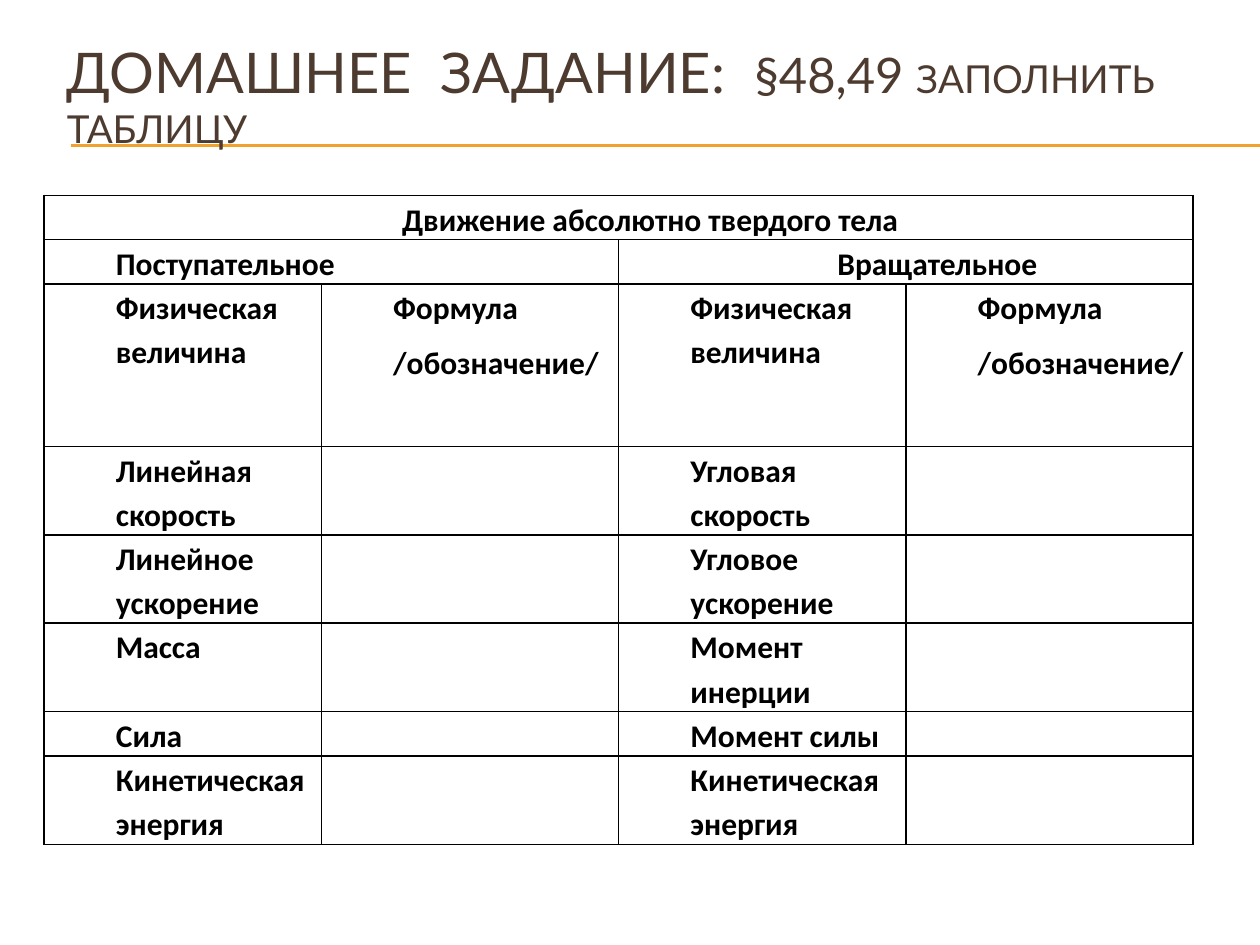
from lxml.etree import SubElement
from pptx import Presentation
from pptx.dml.color import RGBColor
from pptx.enum.shapes import MSO_CONNECTOR
from pptx.enum.text import MSO_ANCHOR, MSO_AUTO_SIZE, PP_ALIGN
from pptx.oxml.ns import qn
from pptx.util import Inches, Pt

HUES = {"rule": "F0A22E", "title": "4E3B30", "ink": "000000"}
FONTS = {"title": "Lato", "table": "Calibri"}
COLS = [22, 23.6, 22.8, 22.8]
ROWS = [3, 3, 12.9, 5.9, 5.9, 3, 3, 5.9]
HEAD = ["Физическая величина", "Формула\n/обозначение/"]
PAIRS = [
    ("Линейная скорость", "Угловая  скорость"),
    ("Линейное ускорение", "Угловое ускорение"),
    ("Масса", "Момент инерции"),
    ("Сила", "Момент силы"),
    ("Кинетическая энергия", "Кинетическая энергия"),
]


class Deck:
    """Draws styled parts on one slide, with lengths on a grid of 100 columns by 75 rows."""

    def __init__(self):
        self.deck = Presentation()
        self.deck.slide_width, self.deck.slide_height = Inches(10), Inches(7.5)
        self.unit = self.deck.slide_width / 100
        self.slide = self.deck.slides.add_slide(self.deck.slide_layouts[5])

    def size(self, *nums):
        return [round(n * self.unit) for n in nums]

    def hue(self, name):
        return RGBColor.from_string(HUES[name])

    def add_run(self, para, text, size, kind, hue, bold=False):
        run = para.add_run()
        run.text = text
        font = run.font
        font.size, font.name, font.bold = Pt(size), FONTS[kind], bold
        font.color.rgb = self.hue(hue)

    def title(self, box, runs):
        shape = self.slide.shapes.title
        shape.left, shape.top, shape.width, shape.height = self.size(*box)
        frame = shape.text_frame
        frame.word_wrap, frame.auto_size = True, MSO_AUTO_SIZE.NONE
        frame.vertical_anchor = MSO_ANCHOR.MIDDLE
        para = frame.paragraphs[0]
        para.alignment = PP_ALIGN.LEFT
        for text, size in runs:
            self.add_run(para, text, size, "title", "title")

    def rule(self, left, right, top):
        ends = self.size(left, top, right, top)
        line = self.slide.shapes.add_connector(MSO_CONNECTOR.STRAIGHT, *ends)
        line.line.color.rgb, line.line.width = self.hue("rule"), Pt(0.75)
        SubElement(line.element.spPr, qn("a:effectLst"))
        self.slide.shapes.title.element.addprevious(line.element)

    def table(self, left, top, cols, rows):
        box = self.size(left, top, sum(cols), sum(rows))
        grid = self.slide.shapes.add_table(len(rows), len(cols), *box).table
        grid.first_row = grid.horz_banding = False
        for col, wide in zip(grid.columns, self.size(*cols)):
            col.width = wide
        for row, high in zip(grid.rows, self.size(*rows)):
            row.height = high
        for cell in grid.iter_cells():
            cell.margin_left = cell.margin_right = Inches(0.07)
            cell.margin_top = cell.margin_bottom = 0
            self.frame(cell)
            cell.fill.background()
        return grid

    def frame(self, cell):
        props = cell._tc.get_or_add_tcPr()
        for side in ("lnL", "lnR", "lnT", "lnB"):
            edge = SubElement(props, qn(f"a:{side}"), w=str(Pt(1)))
            fill = SubElement(edge, qn("a:solidFill"))
            SubElement(fill, qn("a:srgbClr"), val=HUES["ink"])

    def label(self, cell, text, align=PP_ALIGN.LEFT):
        frame = cell.text_frame
        for i, part in enumerate(text.split("\n")):
            para = frame.add_paragraph() if i else frame.paragraphs[0]
            para.alignment, para.line_spacing = align, 1.15
            para.space_after = Pt(6)
            props = para._p.get_or_add_pPr()
            props.set("marL", str(Inches(0.5)))
            props.set("indent", "0")
            self.add_run(para, part, 18, "table", "ink", True)

    def span(self, grid, row, first, last, text, align):
        grid.cell(row, first).merge(grid.cell(row, last))
        self.label(grid.cell(row, first), text, align)


def main():
    page = Deck()
    page.title((4.3, 2.9, 95, 9.2), [
        ("ДОМАШНЕЕ  ЗАДАНИЕ:  ", 32), ("§48,49 ", 28), ("ЗАПОЛНИТЬ ТАБЛИЦУ", 22)])
    for top in (11.5, 11.6):
        page.rule(5.6, 100, top)
    grid = page.table(3.5, 15.5, COLS, ROWS)
    page.span(grid, 0, 0, 3, "Движение абсолютно твердого тела", PP_ALIGN.CENTER)
    page.span(grid, 1, 0, 1, "Поступательное", PP_ALIGN.JUSTIFY)
    page.span(grid, 1, 2, 3, "Вращательное", PP_ALIGN.CENTER)
    for col, text in enumerate(HEAD * 2):
        page.label(grid.cell(2, col), text)
    for row, pair in enumerate(PAIRS, 3):
        for col, text in zip((0, 2), pair):
            page.label(grid.cell(row, col), text)
    page.deck.save("out.pptx")


if __name__ == "__main__":
    main()
